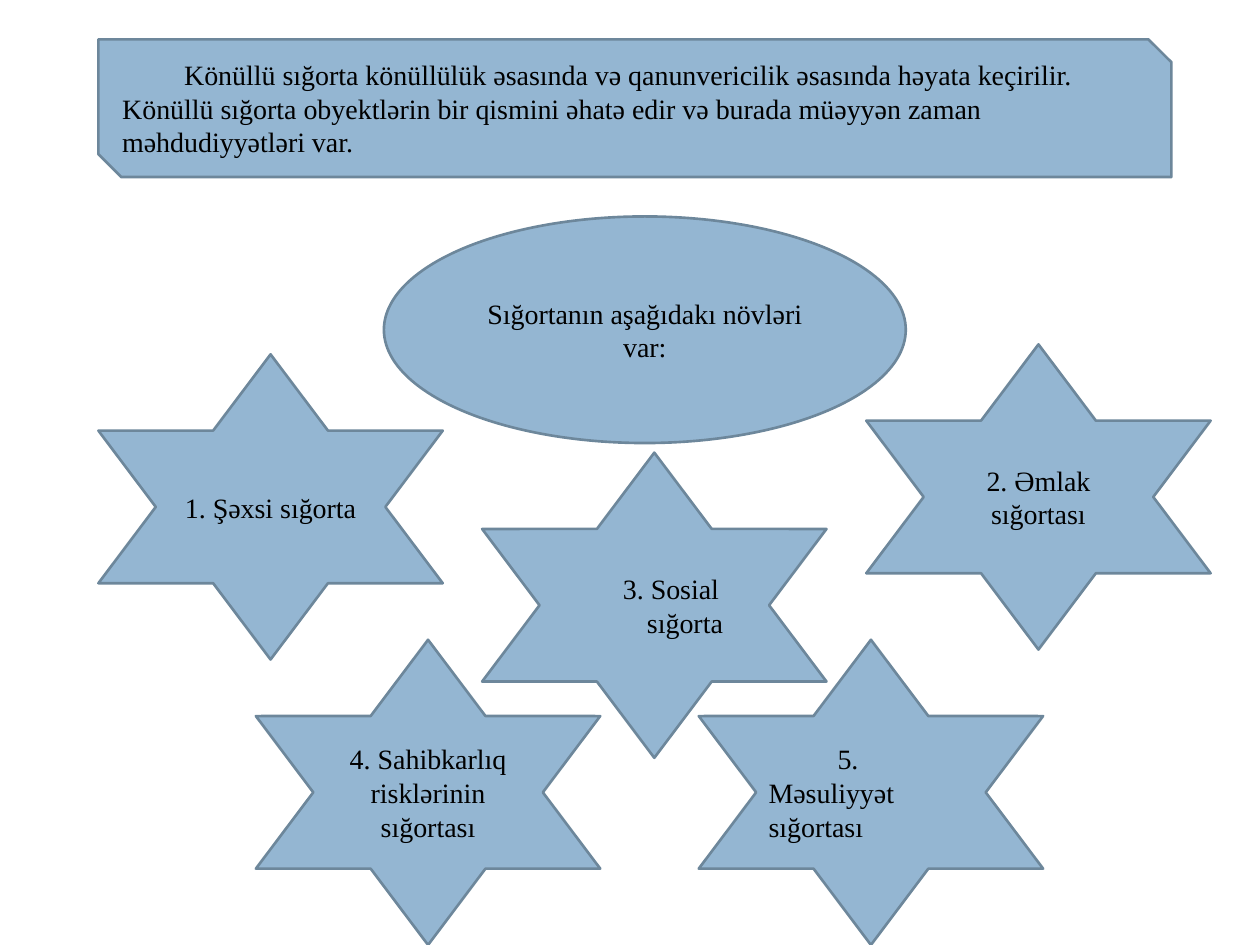
import pptx
import pptx.dml.color
import pptx.enum.shapes
import pptx.enum.text
import pptx.util

Pt = pptx.util.Pt
MSO = pptx.enum.shapes.MSO_SHAPE
LEFT = pptx.enum.text.PP_ALIGN.LEFT
CENTER = pptx.enum.text.PP_ALIGN.CENTER
FILL = pptx.dml.color.RGBColor(0x94, 0xB6, 0xD2)
OUTLINE = pptx.dml.color.RGBColor(0x6D, 0x87, 0x9B)
BLACK = pptx.dml.color.RGBColor(0, 0, 0)

prs = pptx.Presentation()
prs.slide_width, prs.slide_height = Pt(720), Pt(540)
s = prs.slides.add_slide(prs.slide_layouts[6])


def add_box(kind, left, top, width, height, lines, align=CENTER, margin=0, indent=0):
    """Add a filled shape with one paragraph; lines are split by line breaks."""
    sp = s.shapes.add_shape(kind, Pt(left), Pt(top), Pt(width), Pt(height))
    sp.shadow.inherit = False
    sp.fill.solid()
    sp.fill.fore_color.rgb = FILL
    sp.line.color.rgb = OUTLINE
    sp.line.width = Pt(1.5)
    tf = sp.text_frame
    tf.word_wrap = True
    tf.vertical_anchor = pptx.enum.text.MSO_ANCHOR.MIDDLE
    p = tf.paragraphs[0]
    p.alignment = align
    # python-pptx has no public indent setting
    pPr = p._p.get_or_add_pPr()
    pPr.set("marL", str(Pt(margin)))
    pPr.set("indent", str(Pt(indent)))
    for i, line in enumerate(lines):
        if i:
            p.add_line_break()
        r = p.add_run()
        r.text = line
        r.font.name = "Times New Roman"
        r.font.size = Pt(16)
        r.font.color.rgb = BLACK


add_box(MSO.SNIP_2_DIAG_RECTANGLE, 56.2, 22.5, 613.2, 78.7,
        ["Könüllü sığorta könüllülük əsasında və qanunvericilik əsasında həyata keçirilir. "
         "Könüllü sığorta obyektlərin bir qismini əhatə edir və burada müəyyən zaman "
         "məhdudiyyətləri var."], LEFT, indent=35.4)
add_box(MSO.OVAL, 219.4, 123.7, 298.2, 129.5, ["Sığortanın aşağıdakı növləri var:"])

# left, top, lines, alignment, left margin, first-line indent
STARS = [
    (146.2, 365.6, ["4. Sahibkarlıq risklərinin sığortası"], CENTER, 0, 0),
    (275.5, 258.7, ["3. Sosial", "sığorta"], CENTER, 35, -16),
    (399.3, 365.6, ["5. Məsuliyyət sığortası"], LEFT, 0, 39.4),
    (56.2, 202.5, ["1. Şəxsi sığorta"], CENTER, 0, 0),
    (495, 196.8, ["2. Əmlak sığortası"], CENTER, 0, 0),
]
for left, top, lines, align, margin, indent in STARS:
    add_box(MSO.STAR_6_POINT, left, top, 196.8, 174.4, lines, align, margin, indent)

prs.save("out.pptx")
